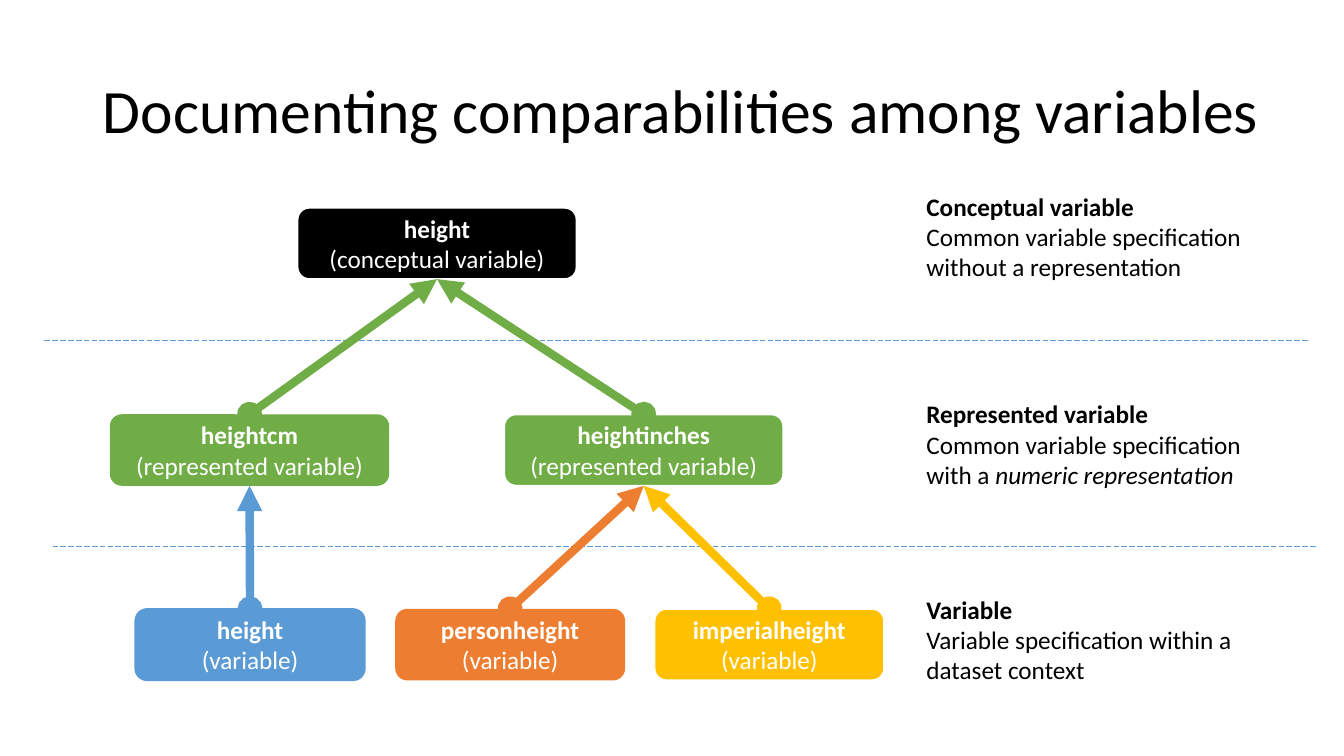
from lxml.etree import SubElement
from pptx import Presentation
from pptx.dml.color import RGBColor
from pptx.enum.dml import MSO_LINE
from pptx.enum.shapes import MSO_CONNECTOR, MSO_SHAPE
from pptx.enum.text import MSO_ANCHOR, PP_ALIGN
from pptx.oxml.ns import qn
from pptx.util import Emu, Pt

PX = 9144  # 100 px to the inch
BLACK = RGBColor(0x00, 0x00, 0x00)
WHITE = RGBColor(0xFF, 0xFF, 0xFF)
GREEN = RGBColor(0x70, 0xAD, 0x47)
BLUE = RGBColor(0x5B, 0x9B, 0xD5)
ORANGE = RGBColor(0xED, 0x7D, 0x31)
YELLOW = RGBColor(0xFF, 0xC0, 0x00)
TOP, BOTTOM = 0, 2
BOX_HEIGHT = 71


def px(*lengths):
    return [Emu(length * PX) for length in lengths]


class VariableSlide:
    font = "Calibri"
    body_size = 18

    def __init__(self, slide):
        self.shapes = slide.shapes

    def style(self, paragraph, color, size=body_size):
        paragraph.font.name = self.font
        paragraph.font.size = Pt(size)
        paragraph.font.color.rgb = color

    def text_frame(self, left, top, width, height):
        frame = self.shapes.add_textbox(*px(left, top, width, height)).text_frame
        frame.word_wrap = True
        frame.vertical_anchor = MSO_ANCHOR.MIDDLE
        return frame

    def title(self, text):
        heading = self.text_frame(92, 40, 1185, 145).paragraphs[0]
        heading.text = text
        heading.line_spacing = 0.9
        self.style(heading, BLACK, 44)

    def box(self, left, top, width, name, level, fill, border=None, border_width=1.5):
        box = self.shapes.add_shape(
            MSO_SHAPE.ROUNDED_RECTANGLE, *px(left, top, width, BOX_HEIGHT))
        box.shadow.inherit = False
        box.fill.solid()
        box.fill.fore_color.rgb = fill
        if border is None:
            box.line.fill.background()
        else:
            box.line.color.rgb = border
            box.line.width = Pt(border_width)
        box.text_frame.vertical_anchor = MSO_ANCHOR.MIDDLE
        label = box.text_frame.paragraphs[0]
        label.alignment = PP_ALIGN.CENTER
        self.style(label, WHITE)
        name_run = label.add_run()
        name_run.text = name
        name_run.font.bold = True
        label.add_line_break()
        label.add_run().text = f"({level})"
        return box

    def line(self, start, end, color, width):
        line = self.shapes.add_connector(MSO_CONNECTOR.STRAIGHT, *px(*start, *end))
        line.line.color.rgb = color
        line.line.width = Pt(width)
        SubElement(line._element.spPr, qn("a:effectLst"))
        return line

    def arrow(self, child, parent, color):
        arrow = self.line((0, 0), (0, 0), color, 6)
        arrow.begin_connect(child, TOP)
        arrow.end_connect(parent, BOTTOM)
        outline = arrow.line._get_or_add_ln()
        SubElement(outline, qn("a:headEnd"), type="oval")
        SubElement(outline, qn("a:tailEnd"), type="triangle")

    def divider(self, left, top):
        divider = self.line((left + 1254, top), (left, top), BLUE, 0.5)
        divider.line.dash_style = MSO_LINE.LONG_DASH

    def note(self, top, heading, text, emphasis=""):
        frame = self.text_frame(909, top, 346, 121)
        term = frame.paragraphs[0]
        term.text = heading
        term.font.bold = True
        meaning = frame.add_paragraph()
        meaning.add_run().text = text
        if emphasis:
            stressed = meaning.add_run()
            stressed.text = emphasis
            stressed.font.italic = True
        for paragraph in frame.paragraphs:
            self.style(paragraph, BLACK)


def main():
    deck = Presentation()
    deck.slide_width, deck.slide_height = px(1333, 750)
    page = VariableSlide(deck.slides.add_slide(deck.slide_layouts[6]))
    page.title("Documenting comparabilities among variables")

    # Dividers between the levels
    page.divider(43, 338)
    page.divider(51, 542)

    # Variables, from the concept down to the datasets
    concept = page.box(295, 206, 277, "height", "conceptual variable", BLACK, WHITE)
    in_cm = page.box(109, 411, 277, "heightcm", "represented variable", GREEN)
    in_inches = page.box(500, 411, 277, "heightinches", "represented variable",
                         GREEN, WHITE)
    height = page.box(134, 604, 228, "height", "variable", BLUE, BLUE, 1)
    person = page.box(392, 604, 228, "personheight", "variable", ORANGE)
    imperial = page.box(649, 604, 228, "imperialheight", "variable", YELLOW, WHITE)

    # Arrows from each variable to the one it specialises
    for child, parent, color in (
        (imperial, in_inches, YELLOW),
        (person, in_inches, ORANGE),
        (height, in_cm, BLUE),
        (in_cm, concept, GREEN),
        (in_inches, concept, GREEN),
    ):
        page.arrow(child, parent, color)

    # Explanation of each level
    page.note(174, "Conceptual variable",
              "Common variable specification without a representation")
    page.note(380, "Represented variable",
              "Common variable specification with a ", "numeric representation")
    page.note(574, "Variable", "Variable specification within a dataset context")

    deck.save("out.pptx")


if __name__ == "__main__":
    main()
